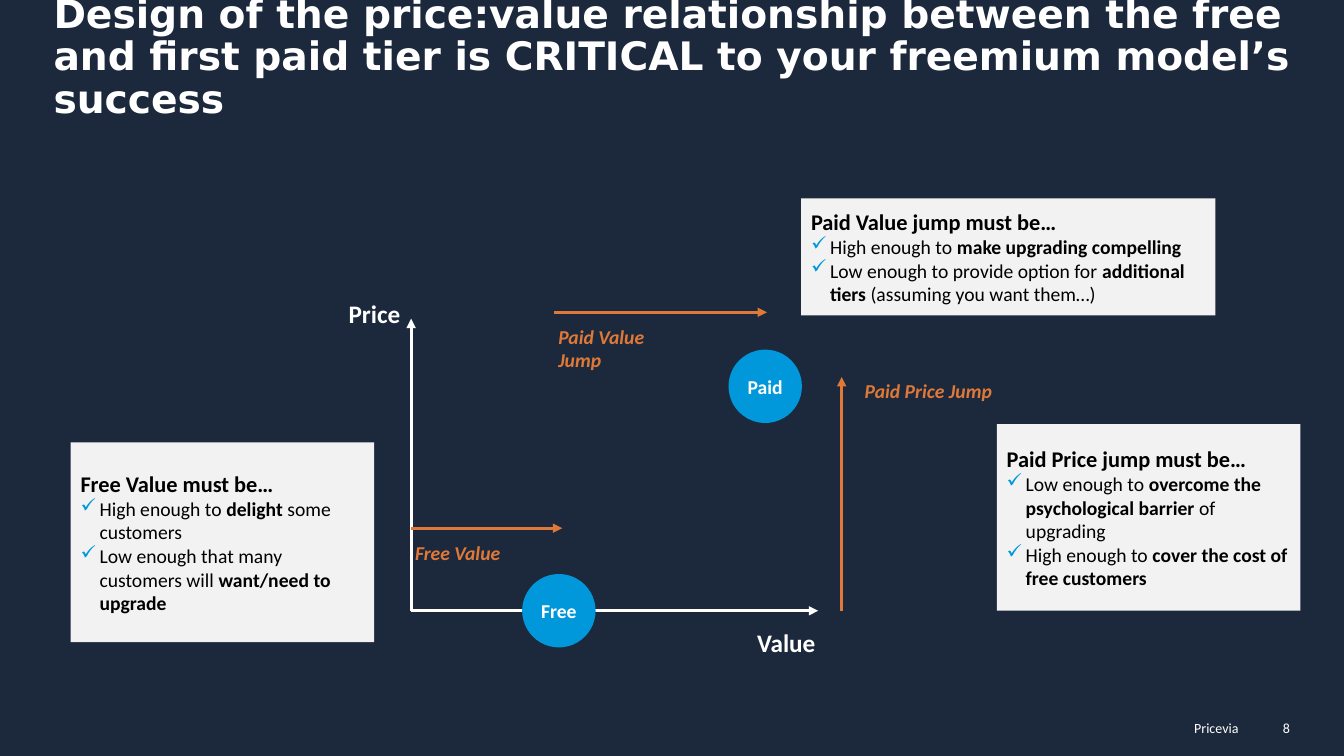
from lxml.etree import SubElement
from pptx import Presentation
from pptx.dml.color import RGBColor
from pptx.enum.shapes import MSO_CONNECTOR, MSO_SHAPE
from pptx.enum.text import MSO_ANCHOR as Anchor, PP_ALIGN as Align
from pptx.oxml.ns import qn
from pptx.util import Cm, Pt

NAVY = RGBColor(0x1C, 0x29, 0x3C)
WHITE = RGBColor(0xFF, 0xFF, 0xFF)
BLACK = RGBColor(0x00, 0x00, 0x00)
BLUE = RGBColor(0x00, 0x98, 0xDB)
ORANGE = RGBColor(0xE0, 0x79, 0x38)
GREY = RGBColor(0xF2, 0xF2, 0xF2)

TITLE = dict(name="DejaVu Sans", size=Pt(28), bold=True, color=WHITE)
FOOTER = dict(name="Calibri", size=Pt(10), color=WHITE)
AXIS = dict(name="Calibri", size=Pt(18), bold=True, color=WHITE)
TIER = dict(name="Calibri", size=Pt(14), bold=True, color=WHITE)
JUMP = dict(name="Calibri", size=Pt(14), bold=True, italic=True, color=ORANGE)
HEADING = dict(name="Calibri", size=Pt(16), bold=True, color=BLACK)
BODY = dict(name="Calibri", size=Pt(14), color=BLACK)

ORIGIN_X, ORIGIN_Y = 10.36, 15.39
TIER_SIZE = 1.85
BULLET_INDENT = Cm(0.48)

CARDS = [
    ((1.78, 11.15, 7.65, 5.03), "Free Value must be…", [
        ("High enough to ", "delight ", "some customers"),
        ("Low enough that many customers will ", "want/need to upgrade")]),
    ((25.12, 10.69, 7.65, 4.7), "Paid Price jump must be…", [
        ("Low enough to ", "overcome the psychological barrier ", "of upgrading"),
        ("High enough to ", "cover the cost of free customers")]),
    ((20.19, 5, 10.44, 2.95), "Paid Value jump must be…", [
        ("High enough to ", "make upgrading compelling"),
        ("Low enough to provide option for ", "additional tiers ",
         "(assuming you want them…)")]),
]


def add_run(paragraph, text, style):
    run = paragraph.add_run()
    run.text = text
    for key, value in style.items():
        if key == "color":
            run.font.color.rgb = value
        else:
            setattr(run.font, key, value)


def set_frame(frame, anchor, side=0.0):
    values = dict(word_wrap=True, vertical_anchor=anchor,
                  margin_left=Cm(side), margin_right=Cm(side),
                  margin_top=Cm(0.13), margin_bottom=Cm(0.13))
    for key, value in values.items():
        setattr(frame, key, value)


def add_label(slide, box, text, style, align=Align.LEFT, anchor=Anchor.TOP):
    frame = slide.shapes.add_textbox(*map(Cm, box)).text_frame
    set_frame(frame, anchor)
    paragraph = frame.paragraphs[0]
    paragraph.alignment = align
    add_run(paragraph, text, style)
    return paragraph


def add_filled(slide, kind, box, color):
    shape = slide.shapes.add_shape(kind, *map(Cm, box))
    shape.shadow.inherit = False
    shape.fill.solid()
    shape.fill.fore_color.rgb = color
    shape.line.fill.background()
    return shape


def add_tier(slide, left, top, text):
    shape = add_filled(slide, MSO_SHAPE.OVAL, (left, top, TIER_SIZE, TIER_SIZE), BLUE)
    set_frame(shape.text_frame, Anchor.MIDDLE)
    paragraph = shape.text_frame.paragraphs[0]
    paragraph.alignment = Align.CENTER
    add_run(paragraph, text, TIER)


def add_arrow(slide, start, end, color):
    connector = slide.shapes.add_connector(
        MSO_CONNECTOR.STRAIGHT, *map(Cm, (*start, *end)))
    connector.line.color.rgb = color
    connector.line.width = Pt(2.25)
    SubElement(connector.line._get_or_add_ln(), qn("a:tailEnd"), type="triangle")
    SubElement(connector._element.spPr, qn("a:effectLst"))


def add_check_bullet(paragraph):
    properties = paragraph._p.get_or_add_pPr()
    properties.set("marL", str(BULLET_INDENT))
    properties.set("indent", str(-BULLET_INDENT))
    color = SubElement(properties, qn("a:buClr"))
    SubElement(color, qn("a:srgbClr"), val=str(BLUE))
    SubElement(properties, qn("a:buChar"), char="✓")


def add_card(slide, box, heading, bullets):
    frame = add_filled(slide, MSO_SHAPE.RECTANGLE, box, GREY).text_frame
    set_frame(frame, Anchor.MIDDLE, 0.25)
    frame.paragraphs[0].alignment = Align.LEFT
    add_run(frame.paragraphs[0], heading, HEADING)
    for parts in bullets:
        paragraph = frame.add_paragraph()
        paragraph.alignment = Align.LEFT
        add_check_bullet(paragraph)
        for index, text in enumerate(parts):
            add_run(paragraph, text, dict(BODY, bold=index % 2 == 1))


def main():
    presentation = Presentation()
    presentation.slide_width, presentation.slide_height = Cm(33.87), Cm(19.05)
    slide = presentation.slides.add_slide(presentation.slide_layouts[6])
    slide.background.fill.solid()
    slide.background.fill.fore_color.rgb = NAVY

    add_label(slide, (23.39, 18.01, 7.82, 0.69), "Pricevia", FOOTER, Align.RIGHT)
    add_label(slide, (30.1, 18.01, 2.41, 0.69), "8", FOOTER, Align.RIGHT)
    title = add_label(
        slide, (1.35, 1.3, 31.17, 1.9),
        "Design of the price:value relationship between the free and first "
        "paid tier is CRITICAL to your freemium model’s success",
        TITLE, anchor=Anchor.BOTTOM)
    title.line_spacing = 0.9

    origin = (ORIGIN_X, ORIGIN_Y)
    add_label(slide, (6.25, 7.39, 3.84, 1.02), "Price", AXIS, Align.RIGHT)
    add_arrow(slide, origin, (ORIGIN_X, 8.03), WHITE)
    add_arrow(slide, origin, (20.62, ORIGIN_Y), WHITE)
    add_tier(slide, 13.16, ORIGIN_Y - TIER_SIZE / 2, "Free")
    add_tier(slide, 18.36, 8.81, "Paid")
    add_label(slide, (17.63, 15.67, 2.92, 0.79), "Value", AXIS, Align.RIGHT)

    add_arrow(slide, (ORIGIN_X, 13.31), (14.17, 13.31), ORANGE)
    add_label(slide, (10.46, 13.49, 2.92, 0.86), "Free Value", JUMP)
    add_arrow(slide, (13.97, 7.87), (19.33, 7.87), ORANGE)
    add_label(slide, (14.07, 8.05, 2.92, 1.45), "Paid Value Jump", JUMP)
    add_arrow(slide, (21.21, ORIGIN_Y), (21.21, 9.5), ORANGE)
    add_label(slide, (21.79, 9.42, 3.3, 0.86), "Paid Price Jump", JUMP)

    for box, heading, bullets in CARDS:
        add_card(slide, box, heading, bullets)
    presentation.save("out.pptx")


if __name__ == "__main__":
    main()
